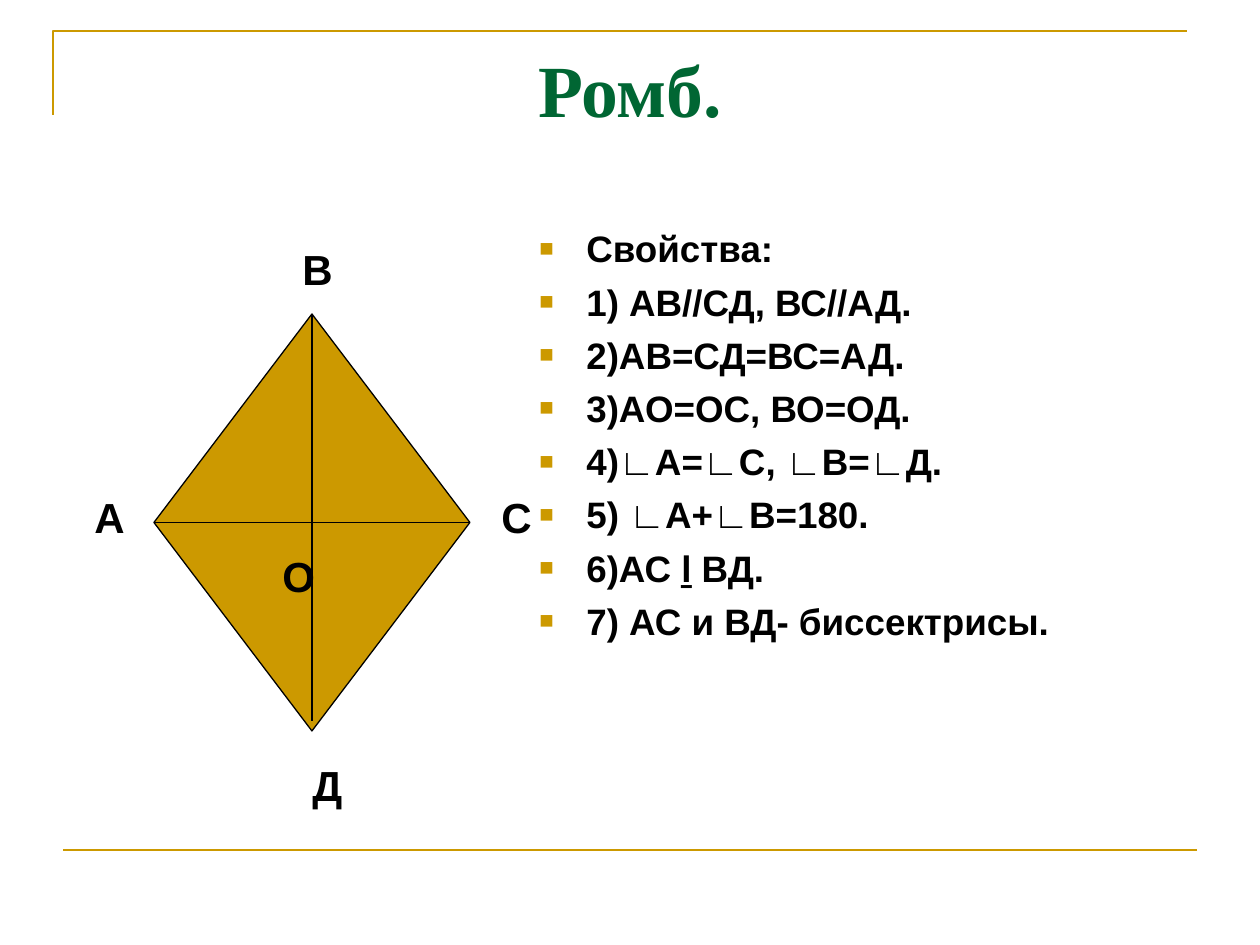
from dataclasses import dataclass

from lxml import etree
from pptx import Presentation
from pptx.dml.color import RGBColor
from pptx.enum.shapes import MSO_CONNECTOR, MSO_SHAPE
from pptx.enum.text import MSO_ANCHOR, PP_ALIGN
from pptx.oxml.ns import qn
from pptx.util import Pt

PX = 914400 / 126  # EMU per px
DIAMOND = MSO_SHAPE.DIAMOND
STRAIGHT = MSO_CONNECTOR.STRAIGHT
TOP = MSO_ANCHOR.TOP
LEFT, CENTER = PP_ALIGN.LEFT, PP_ALIGN.CENTER
SITE_TOP, SITE_LEFT, SITE_RIGHT = 0, 1, 3


@dataclass(frozen=True)
class Theme:
    gold: str = "CC9900"
    green: str = "006633"
    black: str = "000000"
    title_font: str = "Times New Roman"
    body_font: str = "Arial"
    title_size: float = 42
    body_size: float = 21
    label_size: float = 24
    rule_width: float = 1.5
    thin_width: float = 0.75


def px(n):
    return round(n * PX)


def rgb(value):
    return RGBColor.from_string(value)


class Deck:
    def __init__(self, theme, width, height):
        self.t = theme
        self.prs = Presentation()
        self.prs.slide_width, self.prs.slide_height = px(width), px(height)
        self.s = self.prs.slides.add_slide(self.prs.slide_layouts[6])

    def stroke(self, line, color, width):
        line.color.rgb = rgb(color)
        line.width = Pt(width)

    def text(self, x, y, w, h, lines, size, color=None, font=None, align=LEFT, wrap=True):
        tf = self.s.shapes.add_textbox(px(x), px(y), px(w), px(h)).text_frame
        tf.word_wrap = wrap
        tf.vertical_anchor = TOP
        tf.text = "\n".join(lines)
        for p in tf.paragraphs:
            p.alignment = align
            for r in p.runs:
                r.font.name = font or self.t.body_font
                r.font.size = Pt(size)
                r.font.bold = True
                r.font.color.rgb = rgb(color or self.t.black)
        return tf

    def bullets(self, tf, indent, gap):
        for p in tf.paragraphs:
            p.space_before = Pt(gap)
            pPr = p._p.get_or_add_pPr()
            pPr.set("marL", str(px(indent)))
            pPr.set("indent", str(-px(indent)))
            clr = etree.SubElement(pPr, qn("a:buClr"))
            etree.SubElement(clr, qn("a:srgbClr"), val=self.t.gold)
            etree.SubElement(pPr, qn("a:buSzPct"), val="65000")
            etree.SubElement(pPr, qn("a:buFont"), typeface=self.t.body_font)
            etree.SubElement(pPr, qn("a:buChar"), char="■")

    def line(self, x1, y1, x2, y2, color, width):
        c = self.s.shapes.add_connector(STRAIGHT, px(x1), px(y1), px(x2), px(y2))
        self.stroke(c.line, color, width)
        etree.SubElement(c._element.spPr, qn("a:effectLst"))
        return c

    def outline(self, points, color, width):
        fb = self.s.shapes.build_freeform(*points[0], scale=PX)
        fb.add_line_segments(points[1:], close=False)
        sp = fb.convert_to_shape()
        sp.shadow.inherit = False
        sp.fill.background()
        self.stroke(sp.line, color, width)

    def diamond(self, x, y, w, h):
        sp = self.s.shapes.add_shape(DIAMOND, px(x), px(y), px(w), px(h))
        sp.shadow.inherit = False
        sp.fill.solid()
        sp.fill.fore_color.rgb = rgb(self.t.gold)
        self.stroke(sp.line, self.t.black, self.t.thin_width)
        return sp


def main():
    t = Theme()
    d = Deck(t, 1260, 945)

    # Frame
    d.outline([(53, 115), (53, 31), (1187, 31)], t.gold, t.rule_width)
    d.line(63, 850, 1197, 850, t.gold, t.rule_width)

    # Title and properties
    d.text(63, 38, 1134, 157, ["Ромб."], t.title_size, t.green, t.title_font, CENTER)
    properties = [
        "Свойства:",
        "1) АВ//СД, ВС//АД.",
        "2)АВ=СД=ВС=АД.",
        "3)АО=ОС, ВО=ОД.",
        "4)∟А=∟С, ∟В=∟Д.",
        "5) ∟А+∟В=180.",
        "6)АС ḻ ВД.",
        "7) АС и ВД- биссектрисы.",
    ]
    tf = d.text(527, 220, 670, 624, properties, t.body_size)
    d.bullets(tf, indent=47, gap=5.2)

    # Rhombus and its diagonals
    x, y, w, h = 154, 314, 316, 417
    mid_x, mid_y = x + w // 2, y + h // 2
    rhombus = d.diamond(x, y, w, h)
    ac = d.line(x, mid_y, x + w, mid_y, t.black, t.thin_width)
    ac.begin_connect(rhombus, SITE_LEFT)
    ac.end_connect(rhombus, SITE_RIGHT)
    bd = d.line(mid_x, y, mid_x, 721, t.black, t.thin_width)
    bd.begin_connect(rhombus, SITE_TOP)

    # Vertex and centre labels
    labels = [("А", 82, 485), ("В", 290, 237), ("С", 489, 485),
              ("Д", 300, 753), ("О", 270, 544)]
    for name, left, top in labels:
        d.text(left, top, 56, 63, [name], t.label_size, wrap=False)

    d.prs.save("out.pptx")


if __name__ == "__main__":
    main()
